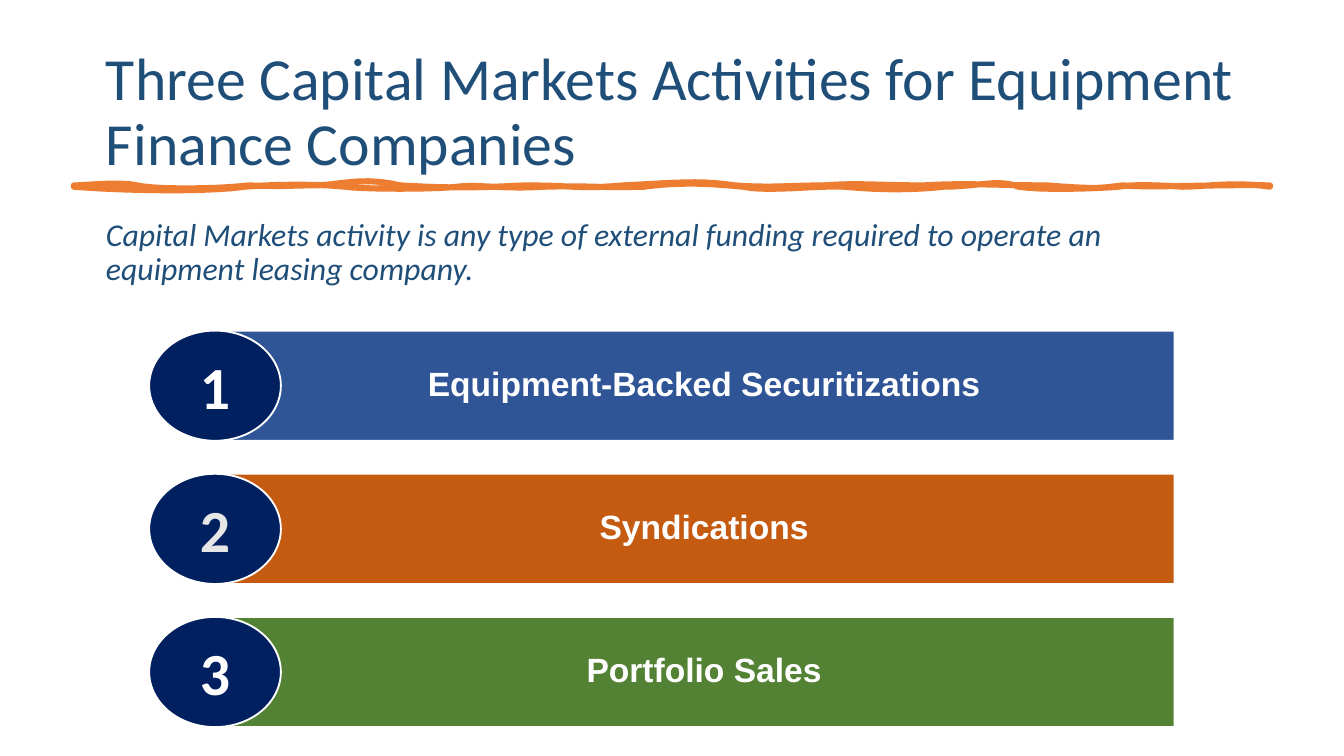
"""Build the slide on three capital markets activities."""
from dataclasses import dataclass

from pptx import Presentation
from pptx.dml.color import RGBColor
from pptx.enum.shapes import MSO_SHAPE
from pptx.enum.text import MSO_ANCHOR, PP_ALIGN
from pptx.shapes.autoshape import Shape
from pptx.slide import Slide
from pptx.util import Inches, Pt

OVAL = MSO_SHAPE.OVAL
TOP, MIDDLE = MSO_ANCHOR.TOP, MSO_ANCHOR.MIDDLE
LEFT, CENTER = PP_ALIGN.LEFT, PP_ALIGN.CENTER

COLORS = {
    "heading": "1F4E79", "stroke": "ED7D31", "badge": "002060",
    "blue": "2F5597", "orange": "C55A11", "green": "548235",
    "white": "FFFFFF", "gray": "E7E6E6",
}

SLIDE_WIDTH = 10
SLIDE_HEIGHT = SLIDE_WIDTH * 9 / 16

BAR_LEFT, BAR_RIGHT, BAR_HEIGHT = 1.11, 8.74, 0.82
BAR_NOTCH, BADGE_WIDTH = 0.5, 0.98
FIRST_BAR_TOP, LAST_BAR_TOP = 2.46, 4.59

STROKE_START = 0.55
UPPER_Y, LOWER_Y = 1.38, 1.39
CURVE_STEPS = 10

UPPER_CURVES = [
    (0.64, 1.38, 0.89, 1.35, 1.02), (1.14, 1.41, 1.6, 1.41, 1.85),
    (2.13, 1.39, 2.16, 1.38, 2.33), (2.54, 1.38, 2.68, 1.31, 2.98),
    (3.31, 1.4, 3.52, 1.4, 3.9), (4.31, 1.38, 4.28, 1.41, 4.64),
    (5.03, 1.36, 5.2, 1.34, 5.47), (5.73, 1.4, 5.88, 1.38, 6.13),
    (6.41, 1.36, 6.51, 1.38, 6.87), (7.21, 1.36, 7.41, 1.38, 7.79),
    (8.17, 1.41, 8.19, 1.4, 8.35), (8.55, 1.4, 9.13, 1.37, 9.45),
]
LOWER_CURVES = [
    (9.2, 1.35, 8.95, 1.39, 8.8), (8.63, 1.38, 8.45, 1.37, 8.32),
    (8.22, 1.4, 7.77, 1.42, 7.58), (7.43, 1.33, 7.27, 1.39, 7.02),
    (6.76, 1.42, 6.5, 1.41, 6.28), (6.07, 1.38, 5.7, 1.43, 5.53),
    (5.32, 1.37, 5.08, 1.35, 4.79), (4.5, 1.4, 4.35, 1.38, 4.05),
    (3.74, 1.41, 3.56, 1.37, 3.4), (3.23, 1.41, 2.71, 1.41, 2.57),
    (2.38, 1.37, 2.06, 1.37, 1.82), (1.56, 1.43, 0.91, 1.42, 0.55),
]


@dataclass
class Activity:
    name: str
    color: str
    number_color: str


@dataclass
class TextStyle:
    font: str
    size: float
    color: str
    bold: bool = False
    italic: bool = False
    align: PP_ALIGN = LEFT
    anchor: MSO_ANCHOR = MIDDLE
    line_spacing: float = 0.9


ACTIVITIES = [
    Activity("Equipment-Backed Securitizations", "blue", "white"),
    Activity("Syndications", "orange", "gray"),
    Activity("Portfolio Sales", "green", "white"),
]
BAR_PITCH = (LAST_BAR_TOP - FIRST_BAR_TOP) / (len(ACTIVITIES) - 1)
TITLE_STYLE = TextStyle("Calibri", 32, "heading")
INTRO_STYLE = TextStyle("Calibri", 17, "heading", italic=True, anchor=TOP)
BAR_STYLE = TextStyle("Arial", 18, "white", bold=True, align=CENTER)


def rgb(name: str) -> RGBColor:
    return RGBColor.from_string(COLORS[name])


def write_text(shape: Shape, text: str, style: TextStyle) -> None:
    frame = shape.text_frame
    frame.text = text
    frame.word_wrap = True
    frame.vertical_anchor = style.anchor
    paragraph = frame.paragraphs[0]
    paragraph.alignment = style.align
    paragraph.line_spacing = style.line_spacing
    font = paragraph.runs[0].font
    font.name, font.size = style.font, Pt(style.size)
    font.bold, font.italic = style.bold, style.italic
    font.color.rgb = rgb(style.color)


def paint(shape: Shape, fill: str, line: str, width: float) -> None:
    shape.shadow.inherit = False
    shape.fill.solid()
    shape.fill.fore_color.rgb = rgb(fill)
    shape.line.color.rgb = rgb(line)
    shape.line.width = Pt(width)


def add_text(slide: Slide, box: tuple, text: str, style: TextStyle) -> None:
    write_text(slide.shapes.add_textbox(*map(Inches, box)), text, style)


def add_outline(slide: Slide, points: list) -> Shape:
    corners = [(Inches(x), Inches(y)) for x, y in points]
    builder = slide.shapes.build_freeform(*corners[0])
    builder.add_line_segments(corners[1:], close=True)
    return builder.convert_to_shape()


def curve_points(start: float, y: float, curves: list) -> list:
    points = [(start, y)]
    for x1, y1, x2, y2, end in curves:
        for step in range(1, CURVE_STEPS + 1):
            t = step / CURVE_STEPS
            weights = ((1 - t) ** 3, 3 * t * (1 - t) ** 2, 3 * t * t * (1 - t), t ** 3)
            points.append((
                sum(w * x for w, x in zip(weights, (start, x1, x2, end))),
                sum(w * v for w, v in zip(weights, (y, y1, y2, y))),
            ))
        start = end
    return points


def add_brush_stroke(slide: Slide) -> None:
    upper = curve_points(STROKE_START, UPPER_Y, UPPER_CURVES)
    lower = curve_points(upper[-1][0], LOWER_Y, LOWER_CURVES)
    stroke = add_outline(slide, upper + lower)
    paint(stroke, "stroke", "stroke", 3.25)
    stroke.fill.background()


def add_activity(slide: Slide, number: int, activity: Activity) -> None:
    top = FIRST_BAR_TOP + (number - 1) * BAR_PITCH
    bottom = top + BAR_HEIGHT
    shoulder = BAR_LEFT + BAR_NOTCH
    bar = add_outline(slide, [
        (BAR_RIGHT, bottom), (shoulder, bottom), (BAR_LEFT, top + BAR_HEIGHT / 2),
        (shoulder, top), (BAR_RIGHT, top),
    ])
    paint(bar, activity.color, "white", 1)
    write_text(bar, activity.name, BAR_STYLE)
    frame = bar.text_frame
    frame.margin_left, frame.margin_right = Inches(0.77), Inches(0.14)
    frame.margin_top = frame.margin_bottom = Inches(0.08)

    badge = slide.shapes.add_shape(
        OVAL, Inches(BAR_LEFT), Inches(top), Inches(BADGE_WIDTH), Inches(BAR_HEIGHT))
    paint(badge, "badge", "white", 1)
    write_text(badge, str(number), TextStyle(
        "Calibri", 32, activity.number_color, bold=True, align=CENTER, line_spacing=1.0))


def main() -> None:
    presentation = Presentation()
    presentation.slide_width = Inches(SLIDE_WIDTH)
    presentation.slide_height = Inches(SLIDE_HEIGHT)
    slide = presentation.slides.add_slide(presentation.slide_layouts[6])
    add_text(slide, (0.69, 0.3, 8.62, 1.09),
             "Three Capital Markets Activities for Equipment Finance Companies", TITLE_STYLE)
    add_brush_stroke(slide)
    add_text(slide, (0.69, 1.58, 8.62, 3.49),
             "Capital Markets activity is any type of external funding required "
             "to operate an equipment leasing company.", INTRO_STYLE)
    for number, activity in enumerate(ACTIVITIES, start=1):
        add_activity(slide, number, activity)
    presentation.save("out.pptx")


if __name__ == "__main__":
    main()
